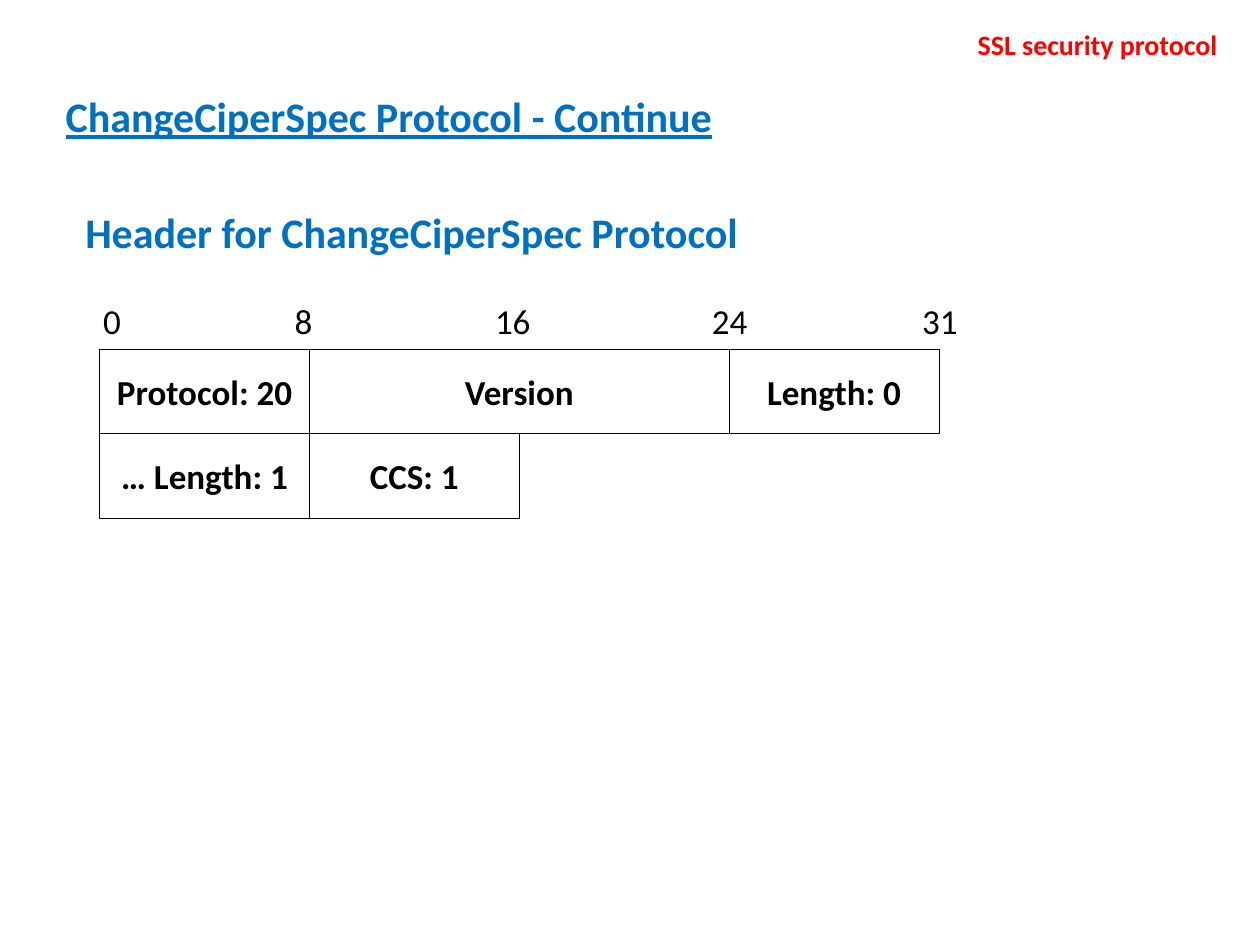
from lxml import etree
from pptx import Presentation
from pptx.dml.color import RGBColor
from pptx.enum.shapes import MSO_SHAPE
from pptx.enum.text import MSO_ANCHOR, MSO_AUTO_SIZE, PP_ALIGN
from pptx.oxml.ns import qn
from pptx.util import Cm, Pt

RECT = MSO_SHAPE.RECTANGLE
MIDDLE, TOP = MSO_ANCHOR.MIDDLE, MSO_ANCHOR.TOP
CENTER, LEFT = PP_ALIGN.CENTER, PP_ALIGN.LEFT
NO_AUTOFIT = MSO_AUTO_SIZE.NONE

BLACK, BLUE, RED = "000000", "0070C0", "FF0000"
BYTE_W, ROW_H = 4.23, 1.7

# Each row lists (label, width in bytes)
HEADER_ROWS = [
    [("Protocol: 20", 1), ("Version", 2), ("Length: 0", 1)],
    [("… Length: 1", 1), ("CCS: 1", 1)],
]
BIT_MARKS = ["0", "8", "16", "24", "31"]
MARK_TABS = [3.86, 7.9, 12.27, 16.51]


def rgb(color):
    return RGBColor.from_string(color)


def write(sp, text, size, color, bold=True, underline=False, align=LEFT,
          anchor=TOP, wrap=True):
    tf = sp.text_frame
    tf.auto_size = NO_AUTOFIT
    tf.word_wrap = wrap
    tf.vertical_anchor = anchor
    p = tf.paragraphs[0]
    p.text = text
    p.alignment = align
    font = p.runs[0].font
    font.name, font.size = "Calibri", Pt(size)
    font.bold, font.underline = bold, underline
    font.color.rgb = rgb(color)
    return p


def add_label(s, text, left, top, width, height, size, color, **style):
    sp = s.shapes.add_textbox(Cm(left), Cm(top), Cm(width), Cm(height))
    return write(sp, text, size, color, **style)


def add_title(s, left, top, width, height):
    sp = s.shapes.title
    sp.left, sp.top, sp.width, sp.height = map(Cm, (left, top, width, height))
    write(sp, "ChangeCiperSpec Protocol - Continue", 24, BLUE,
          underline=True, wrap=False)


def add_bit_ruler(s, left, top, width, height):
    p = add_label(s, "\t".join(BIT_MARKS), left, top, width, height, 20, BLACK,
                  bold=False)
    tabs = etree.SubElement(p._p.get_or_add_pPr(), qn("a:tabLst"))
    for pos in MARK_TABS:
        etree.SubElement(tabs, qn("a:tab"), pos=str(Cm(pos)), algn="l")


def add_field(s, text, left, top, width, height):
    sp = s.shapes.add_shape(RECT, Cm(left), Cm(top), Cm(width), Cm(height))
    sp.shadow.inherit = False
    sp.fill.background()
    sp.line.color.rgb = rgb(BLACK)
    sp.line.width = Pt(0.25)
    write(sp, text, 20, BLACK, align=CENTER, anchor=MIDDLE)


def add_header_diagram(s, left, top):
    """Heading, bit ruler and packet fields, placed from the heading's corner."""
    add_label(s, "Header for ChangeCiperSpec Protocol", left, top, 14.68, 1.27,
              24, BLUE)
    add_bit_ruler(s, left + 0.36, top + 1.88, 18.11, 1.12)
    for row, fields in enumerate(HEADER_ROWS):
        x = left + 0.54
        for text, size in fields:
            add_field(s, text, x, top + 3 + row * ROW_H, size * BYTE_W, ROW_H)
            x += size * BYTE_W


def main():
    prs = Presentation()
    prs.slide_width, prs.slide_height = Cm(25.4), Cm(19.05)
    s = prs.slides.add_slide(prs.slide_layouts[5])
    add_header_diagram(s, 1.47, 4.04)
    add_title(s, 1.07, 1.7, 13.87, 1.27)
    add_label(s, "SSL security protocol", 19.46, 0.43, 5.41, 0.94, 16, RED,
              wrap=False)
    prs.save("out.pptx")


if __name__ == "__main__":
    main()
